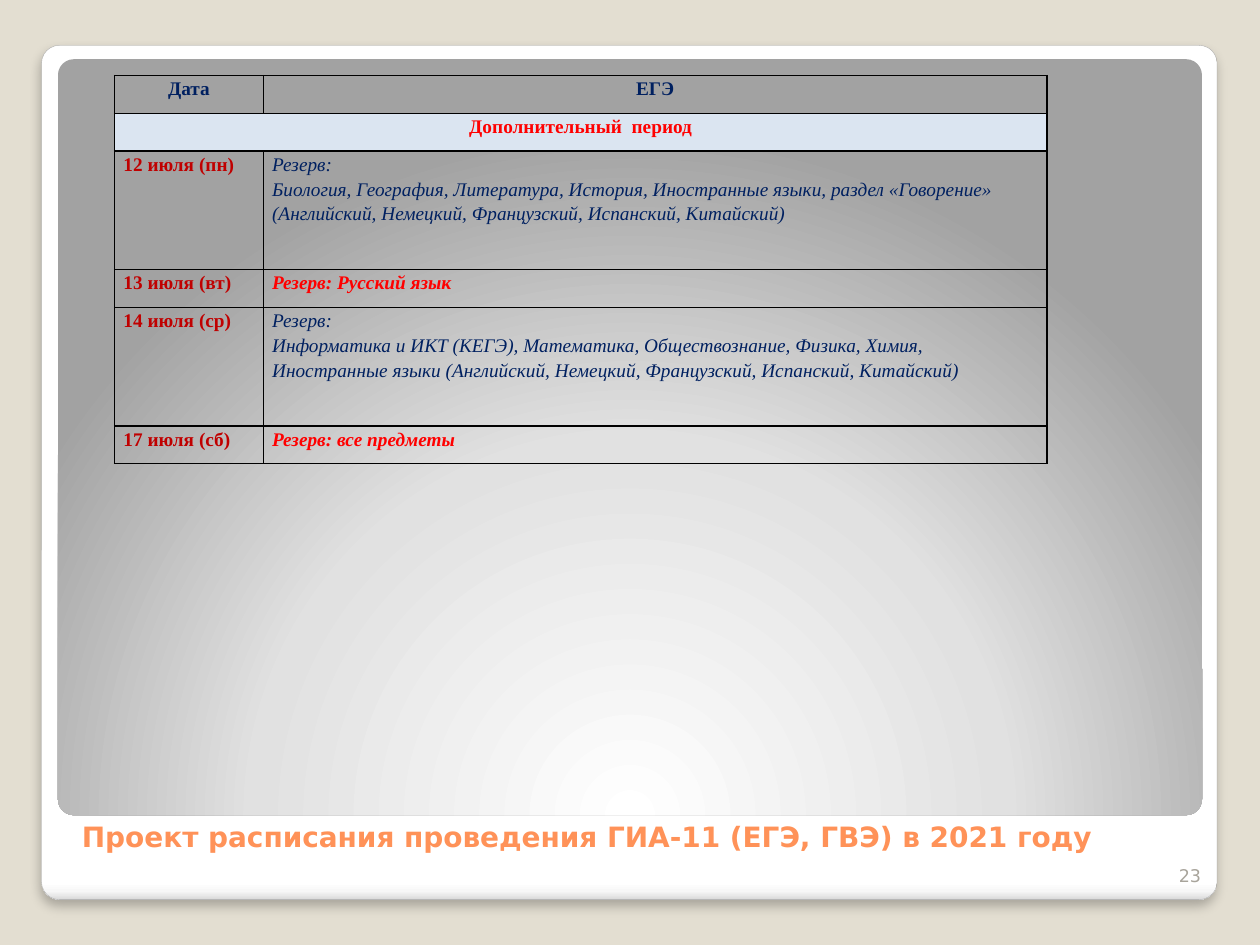
from pptx import Presentation
from pptx.dml.color import RGBColor
from pptx.enum.shapes import MSO_SHAPE
from pptx.enum.text import MSO_ANCHOR, MSO_AUTO_SIZE, PP_ALIGN
from pptx.oxml import parse_xml
from pptx.oxml.ns import nsdecls, qn
from pptx.util import Inches, Pt

COLORS = {
    "backdrop": "E3DED1", "title": "FF9258", "number": "A8A49B",
    "frame_line": "A4A4A4", "band": "DBE5F1", "border": "000000",
    "navy": "002060", "red": "FF0000", "date": "C00000",
}
TITLE_FONT = "DejaVu Sans"
TABLE_FONT = "Times New Roman"
HEADING = {"bold": True, "italic": False, "color": "navy"}
PERIOD = {"bold": True, "italic": False, "color": "red"}
DATE = {"bold": True, "italic": False, "color": "date"}
SUBJECTS = {"bold": False, "italic": True, "color": "navy"}
KEY_EXAM = {"bold": True, "italic": True, "color": "red"}

SCHEDULE = [
    ("12 июля (пн)", ["Резерв:", "Биология, География, Литература, История, Иностранные языки, "
                      "раздел «Говорение» (Английский, Немецкий, Французский, Испанский, Китайский)"], SUBJECTS),
    ("13 июля (вт)", ["Резерв: Русский язык"], KEY_EXAM),
    ("14 июля (ср)", ["Резерв:", "Информатика и ИКТ (КЕГЭ), Математика, Обществознание, Физика, Химия, "
                      "Иностранные языки (Английский, Немецкий, Французский, Испанский, Китайский)"], SUBJECTS),
    ("17 июля (сб)", ["Резерв: все предметы"], KEY_EXAM),
]


def rgb(key):
    return RGBColor.from_string(COLORS[key])


def set_values(target, values):
    for name, value in values.items():
        setattr(target, name, value)


def box(left, top, width, height):
    return dict(zip(("left", "top", "width", "height"), map(Inches, (left, top, width, height))))


def write(frame, lines, size, font, color, align=PP_ALIGN.LEFT, spacing=None, bold=False, italic=False):
    for index, line in enumerate(lines):
        paragraph = frame.add_paragraph() if index else frame.paragraphs[0]
        set_values(paragraph, {"alignment": align, "line_spacing": spacing})
        run = paragraph.add_run()
        run.text = line
        set_values(run.font, {"size": Pt(size), "name": font, "bold": bold, "italic": italic})
        run.font.color.rgb = rgb(color)


def add_panel(slide, place, stops, direction):
    panel = slide.shapes.add_shape(MSO_SHAPE.ROUNDED_RECTANGLE, **place)
    panel.adjustments[0] = 0.021
    panel.shadow.inherit = False
    panel.line.fill.background()
    panel.fill.gradient()
    stop_xml = "".join(
        f'<a:gs pos="{position * 1000}"><a:srgbClr val="{color}"/></a:gs>' for position, color in stops
    )
    gradient = panel._element.spPr.find(qn("a:gradFill"))
    gradient.getparent().replace(gradient, parse_xml(
        f'<a:gradFill {nsdecls("a")} rotWithShape="1"><a:gsLst>{stop_xml}</a:gsLst>{direction}</a:gradFill>'
    ))
    return panel


def add_frame(slide):
    frame = add_panel(
        slide, box(0.33, 0.36, 9.33, 6.78),
        [(0, "FFFFFF"), (98, "FFFFFF"), (99, "F7F7F7"), (100, "DADADA")],
        '<a:lin ang="5400000" scaled="0"/>',
    )
    frame.line.color.rgb = rgb("frame_line")
    frame.line.width = Pt(0.16)
    frame._element.spPr.find(qn("a:effectLst")).append(parse_xml(
        f'<a:outerShdw {nsdecls("a")} blurRad="{Pt(6)}" dist="{Pt(4)}" dir="5400000" algn="t" rotWithShape="0">'
        '<a:srgbClr val="000000"><a:alpha val="25000"/></a:srgbClr></a:outerShdw>'
    ))


def place_title(slide, text):
    title = slide.shapes.title
    slide.shapes._spTree.append(title._element)
    set_values(title, box(0.55, 6.35, 8.95, 0.47))
    set_values(title.text_frame, {
        "vertical_anchor": MSO_ANCHOR.BOTTOM, "word_wrap": True, "auto_size": MSO_AUTO_SIZE.NONE,
    })
    write(title.text_frame, [text], 16, TITLE_FONT, "title", bold=True)


def add_page_number(slide, text):
    number = slide.shapes.add_textbox(**box(9.13, 6.68, 0.5, 0.4))
    set_values(number.text_frame, {"vertical_anchor": MSO_ANCHOR.BOTTOM, "word_wrap": True})
    write(number.text_frame, [text], 10, TITLE_FONT, "number", align=PP_ALIGN.RIGHT)


def draw_borders(cell):
    properties = cell._tc.get_or_add_tcPr()
    for index, side in enumerate(("lnL", "lnR", "lnT", "lnB")):
        properties.insert(index, parse_xml(
            f'<a:{side} {nsdecls("a")} w="{Pt(1)}"><a:solidFill>'
            f'<a:srgbClr val="{COLORS["border"]}"/></a:solidFill></a:{side}>'
        ))


def fill_cell(cell, lines, style, align=PP_ALIGN.LEFT):
    side = Inches(0.05 if align == PP_ALIGN.CENTER else 0.07)
    set_values(cell, {"margin_left": side, "margin_right": side, "margin_top": 0, "margin_bottom": 0})
    write(cell.text_frame, lines, 11, TABLE_FONT, align=align, spacing=1.15, **style)


def add_schedule(slide):
    heights = [0.3, 0.3] + [0.94 if len(lines) > 1 else 0.3 for _, lines, _ in SCHEDULE]
    table = slide.shapes.add_table(len(heights), 2, **box(0.91, 0.6, 7.4, sum(heights))).table
    set_values(table, {"first_row": False, "horz_banding": False})
    for column, width in zip(table.columns, (1.18, 6.22)):
        column.width = Inches(width)
    for row, height in zip(table.rows, heights):
        row.height = Inches(height)
    for cell in table.iter_cells():
        cell.fill.background()
        draw_borders(cell)

    for column, heading in enumerate(("Дата", "ЕГЭ")):
        fill_cell(table.cell(0, column), [heading], HEADING, PP_ALIGN.CENTER)
    period = table.cell(1, 0)
    period.merge(table.cell(1, 1))
    period.fill.solid()
    period.fill.fore_color.rgb = rgb("band")
    fill_cell(period, ["Дополнительный  период"], PERIOD, PP_ALIGN.CENTER)
    for row, (date, exams, style) in enumerate(SCHEDULE, start=2):
        fill_cell(table.cell(row, 0), [date], DATE)
        fill_cell(table.cell(row, 1), exams, style)


def main():
    deck = Presentation()
    set_values(deck, {"slide_width": Inches(10), "slide_height": Inches(7.5)})
    slide = deck.slides.add_slide(deck.slide_layouts[5])
    slide.background.fill.solid()
    slide.background.fill.fore_color.rgb = rgb("backdrop")
    add_frame(slide)
    add_panel(
        slide, box(0.46, 0.47, 9.08, 6),
        [(0, "FFFFFF"), (55, "E1E1E1"), (100, "A2A2A2")],
        '<a:path path="circle"><a:fillToRect l="50000" t="175000" r="50000" b="-75000"/></a:path>',
    )
    place_title(slide, "Проект расписания проведения ГИА-11 (ЕГЭ, ГВЭ) в 2021 году")
    add_schedule(slide)
    add_page_number(slide, "23")
    deck.save("out.pptx")


if __name__ == "__main__":
    main()
